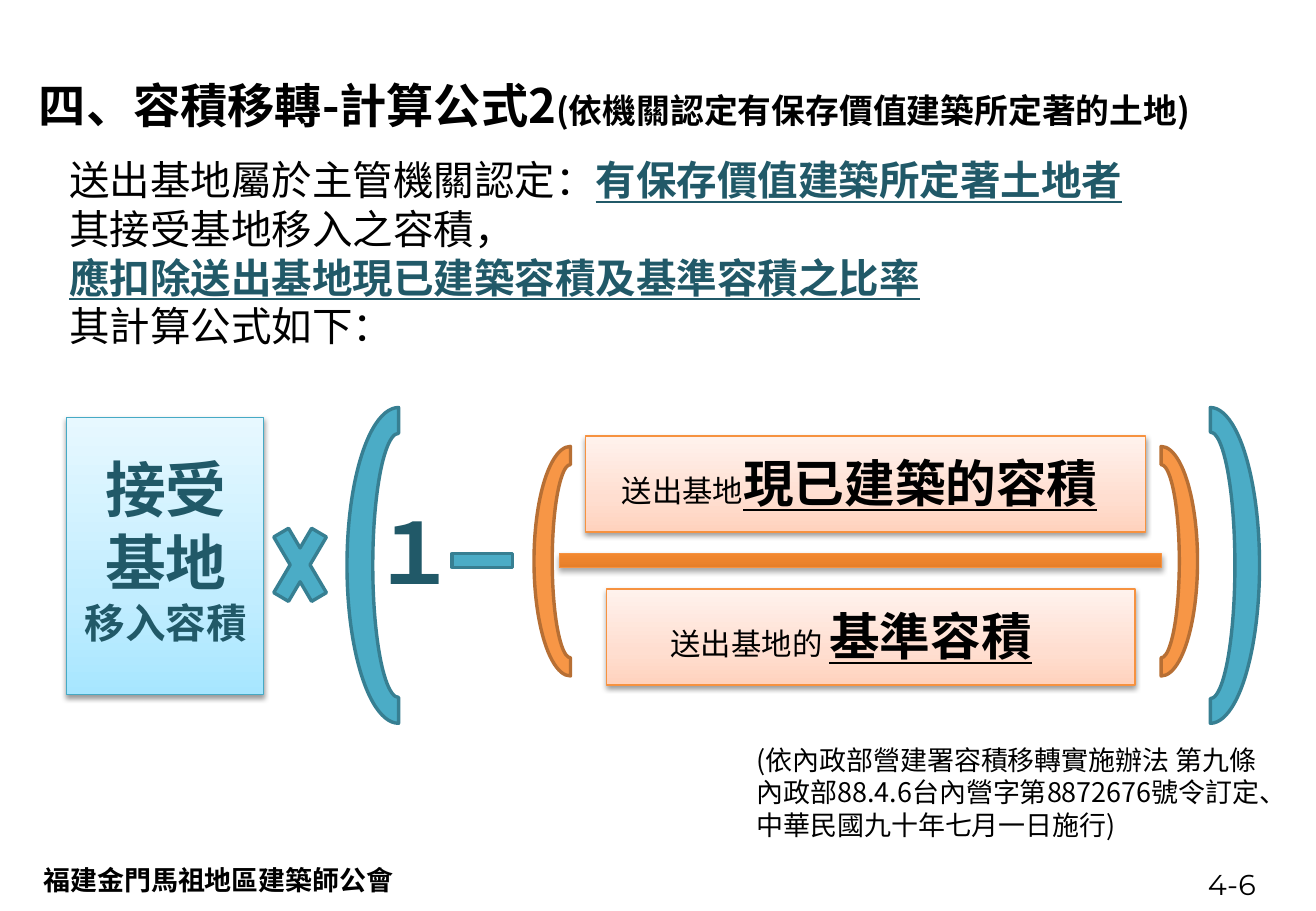
from dataclasses import dataclass
from typing import Optional

from lxml.etree import SubElement
from pptx import Presentation
from pptx.dml.color import RGBColor
from pptx.enum.shapes import MSO_SHAPE as Preset
from pptx.enum.text import MSO_ANCHOR as Anchor, PP_ALIGN as Align
from pptx.oxml.ns import qn
from pptx.util import Emu, Pt

PX = 9144
CJK = "Noto Sans CJK SC"
BLACK, TEAL = "000000", "215968"
BLUE_FILL, BLUE_LINE = "4BACC6", "377F92"
ORANGE_FILL, ORANGE_LINE = "F79646", "B76F34"
ORANGE_EDGE = "F69240"
PEACH = ((0, "FFD2BD"), (35, "FFDED0"), (100, "FFF2ED"))
SKY = ((0, "A7E6FF"), (35, "C1EDFF"), (100, "E7F8FF"))
AMBER = ((0, "CC6E20"), (80, "FF9034"), (100, "FF9136"))


@dataclass(frozen=True)
class Span:
    """A run of text with one look."""
    text: str
    size: int
    color: str = BLACK
    bold: bool = False
    underline: bool = False
    font: str = CJK


@dataclass(frozen=True)
class Label:
    """A text box: its place in px and its paragraphs of spans."""
    place: tuple[int, int, int, int]
    lines: tuple[tuple[Span, ...], ...]
    align: Align = Align.LEFT
    wrap: bool = True
    inset: tuple[int, int] = (10, 5)
    anchor: Anchor = Anchor.TOP


@dataclass(frozen=True)
class Figure:
    """A flat formula sign."""
    preset: Preset
    place: tuple[int, int, int, int]
    fill: str
    line: str
    rotation: int = 0
    flip: bool = False


@dataclass(frozen=True)
class Panel:
    """A shape with a vertical gradient and a soft shadow."""
    preset: Preset
    place: tuple[int, int, int, int]
    stops: tuple[tuple[int, str], ...]
    line: str
    opacity: int = 38
    distance: int = 20000


def px(*lengths: int) -> list[Emu]:
    """Turn px lengths into EMU."""
    return [Emu(length * PX) for length in lengths]


def rgb(value: str) -> RGBColor:
    """Turn a hex string into a colour."""
    return RGBColor.from_string(value)


def write(box, label: Label) -> None:
    """Place a text shape and fill it with formatted text."""
    box.left, box.top, box.width, box.height = px(*label.place)
    frame = box.text_frame
    frame.word_wrap = label.wrap
    frame.vertical_anchor = label.anchor
    frame.margin_left, frame.margin_top = px(*label.inset)
    frame.margin_right, frame.margin_bottom = px(*label.inset)
    frame.text = "\n".join("" for _ in label.lines)
    for para, spans in zip(frame.paragraphs, label.lines):
        para.alignment = label.align
        for span in spans:
            run = para.add_run()
            run.text = span.text
            font = run.font
            font.size, font.name = Pt(span.size), span.font
            font.bold, font.underline = span.bold, span.underline
            font.color.rgb = rgb(span.color)
            SubElement(font._element, qn("a:ea"), typeface=CJK)


def add_label(slide, label: Label) -> None:
    """Add a text box."""
    write(slide.shapes.add_textbox(*px(*label.place)), label)


def add_figure(slide, figure: Figure) -> None:
    """Add a flat sign, turned and mirrored as asked."""
    shape = slide.shapes.add_shape(figure.preset, *px(*figure.place))
    shape.shadow.inherit = False
    shape.rotation = figure.rotation
    if figure.flip:
        shape._element.spPr.xfrm.set("flipH", "1")
    shape.fill.solid()
    shape.fill.fore_color.rgb = rgb(figure.fill)
    shape.line.color.rgb = rgb(figure.line)
    shape.line.width = Pt(2)


def add_panel(slide, panel: Panel) -> None:
    """Add a gradient panel with its shadow."""
    shape = slide.shapes.add_shape(panel.preset, *px(*panel.place))
    shape.fill.gradient()
    shape.fill.gradient_angle = 90
    properties = shape._element.spPr
    stop_list = properties.find(f".//{qn('a:gsLst')}")
    for old in list(stop_list):
        stop_list.remove(old)
    for position, color in panel.stops:
        stop = SubElement(stop_list, qn("a:gs"), pos=str(position * 1000))
        SubElement(stop, qn("a:srgbClr"), val=color)
    shape.line.color.rgb = rgb(panel.line)
    shape.line.width = Pt(0.75)
    shape.shadow.inherit = False
    shadow = SubElement(properties.find(qn("a:effectLst")), qn("a:outerShdw"), blurRad="40000",
                        dist=str(panel.distance), dir="5400000", rotWithShape="0")
    tint = SubElement(shadow, qn("a:srgbClr"), val=BLACK)
    SubElement(tint, qn("a:alpha"), val=str(panel.opacity * 1000))


TITLE = Label((22, 58, 1015, 57), ((
    Span("四、容積移轉-計算公式2", 28, bold=True),
    Span("(依機關認定有保存價值建築所定著的土地)", 20, bold=True)),))

PANELS = (
    Panel(Preset.MATH_MINUS, (371, 438, 674, 47), AMBER, ORANGE_EDGE, 35, 23000),
    Panel(Preset.RECTANGLE, (55, 344, 162, 228), SKY, "46AAC5"),
    Panel(Preset.RECTANGLE, (482, 359, 461, 79), PEACH, ORANGE_EDGE),
    Panel(Preset.RECTANGLE, (499, 485, 435, 79), PEACH, ORANGE_EDGE),
)

FIGURES = (
    Figure(Preset.MATH_MULTIPLY, (217, 414, 60, 102), BLUE_FILL, BLUE_LINE),
    Figure(Preset.MATH_MINUS, (363, 438, 68, 47), BLUE_FILL, BLUE_LINE),
    Figure(Preset.BLOCK_ARC, (375, 432, 189, 60), ORANGE_FILL, ORANGE_LINE, 270, True),
    Figure(Preset.BLOCK_ARC, (861, 432, 189, 60), ORANGE_FILL, ORANGE_LINE, 90),
    Figure(Preset.BLOCK_ARC, (198, 423, 260, 85), BLUE_FILL, BLUE_LINE, 270, True),
    Figure(Preset.BLOCK_ARC, (866, 425, 260, 81), BLUE_FILL, BLUE_LINE, 90),
)

LABELS = (
    Label((47, 123, 964, 172), (
        (Span("送出基地屬於主管機關認定：", 24),
         Span("有保存價值建築所定著土地者", 24, TEAL, True, True)),
        (Span("其接受基地移入之容積，", 24),),
        (Span("應扣除送出基地現已建築容積及基準容積之比率", 24, TEAL, True, True),),
        (Span("其計算公式如下：", 24),))),
    Label((47, 367, 179, 172), (
        (Span("接受", 36, TEAL, True),),
        (Span("基地", 36, TEAL, True),),
        (Span("移入容積", 24, TEAL, True),)), Align.CENTER),
    Label((456, 367, 503, 61), (
        (Span("送出基地", 18), Span("現已建築的容積", 30, BLACK, True, True)),), Align.CENTER),
    Label((542, 493, 335, 60), (
        (Span("送出基地的 ", 18), Span("基準容積", 30, BLACK, True, True)),), wrap=False),
    Label((252, 407, 179, 94), ((Span("１", 50, TEAL, True),),), Align.CENTER),
    Label((994, 714, 60, 28), ((Span("4-6", 17, font="Montserrat"),),),
          wrap=False, inset=(0, 0), anchor=Anchor.MIDDLE),
    Label((613, 607, 487, 91), (
        (Span("(依內政部營建署容積移轉實施辦法 第九條", 16),),
        (Span("內政部88.4.6台內營字第8872676號令訂定、", 16),),
        (Span("中華民國九十年七月一日施行)", 16),))),
    Label((26, 706, 312, 37), ((Span("福建金門馬祖地區建築師公會", 16, bold=True, font="Calibri"),),),
          wrap=False),
)


def main() -> None:
    """Build the slide and save the deck."""
    deck = Presentation()
    deck.slide_width, deck.slide_height = px(1083, 750)
    slide = deck.slides.add_slide(deck.slide_layouts[5])
    write(slide.shapes.title, TITLE)
    for panel in PANELS:
        add_panel(slide, panel)
    for figure in FIGURES:
        add_figure(slide, figure)
    for label in LABELS:
        add_label(slide, label)
    deck.save("out.pptx")


if __name__ == "__main__":
    main()
